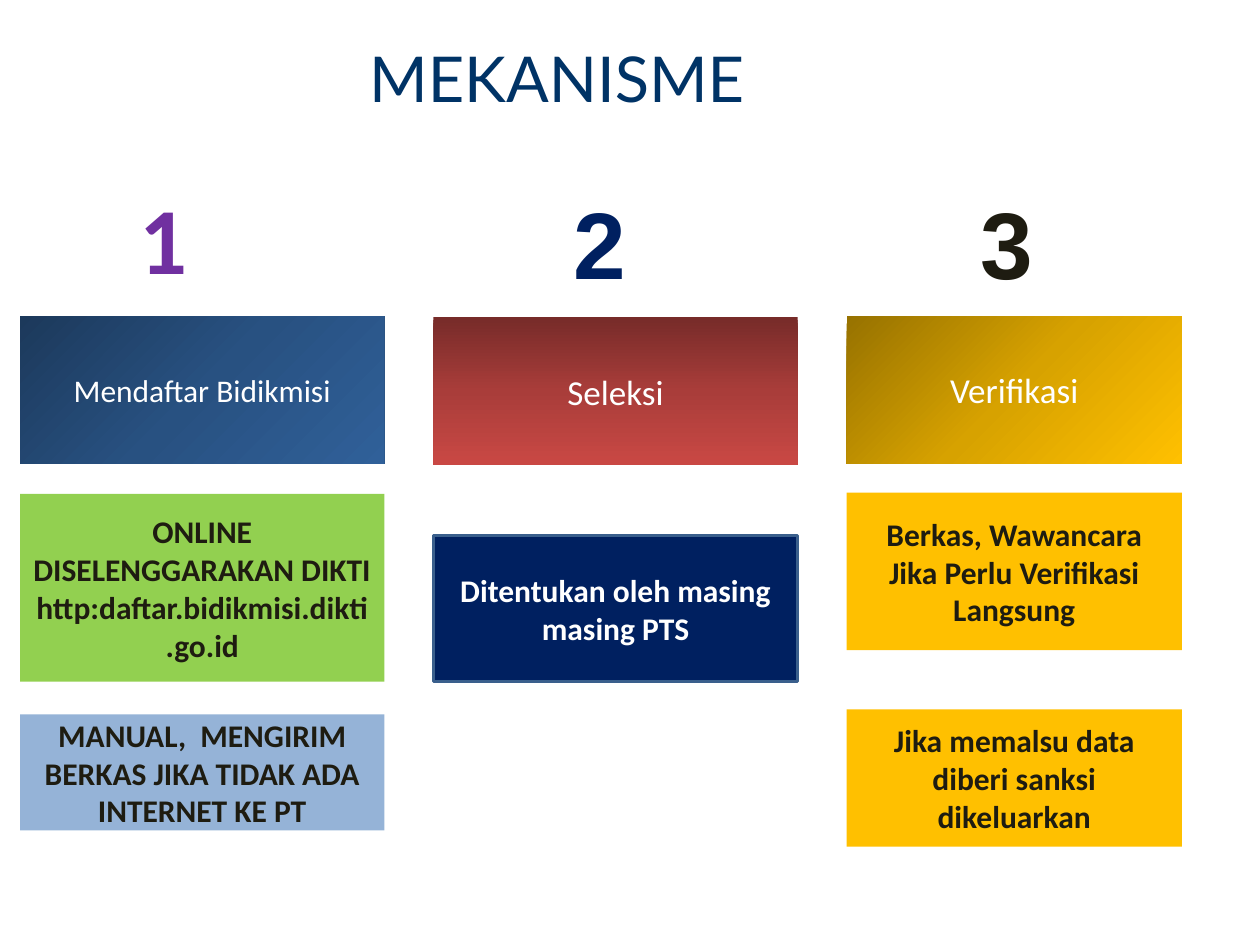
from copy import deepcopy

from pptx import Presentation
from pptx.dml.color import RGBColor
from pptx.enum.shapes import MSO_SHAPE
from pptx.enum.text import MSO_ANCHOR, PP_ALIGN
from pptx.util import Inches, Pt

COLORS = {
    "title": "003366", "white": "FFFFFF", "dark": "1E1C11", "navy": "002060",
    "purple": "7030A0", "green": "92D050", "sky": "95B3D7", "gold": "FFC000",
    "border": "3A5F8C",
}

# Content: each step has a number, a gradient header and detail boxes
TITLE = "MEKANISME"
STEPS = [
    {
        "left": 0.16, "width": 2.89,
        "number": ("1", 1.01, 1.37, "Calibri", "purple"),
        "header": ("Mendaftar Bidikmisi", 2.51, 18),
        "gradient": (["1C395B", "285181", "306099"], 315),
        "details": [
            (["ONLINE DISELENGGARAKAN DIKTI", "http:daftar.bidikmisi.dikti.go.id"],
             3.92, 1.49, "green", "dark", None),
            (["MANUAL,  MENGIRIM BERKAS JIKA TIDAK ADA INTERNET KE PT"],
             5.67, 0.92, "sky", "dark", None),
        ],
    },
    {
        "left": 3.44, "width": 2.89,
        "number": ("2", 4.45, 1.41, "Arial", "navy"),
        "header": ("Seleksi", 2.52, 20),
        "gradient": (["772B29", "A93D3A", "C94844"], 270),
        "details": [
            (["Ditentukan oleh masing masing PTS"],
             4.25, 1.16, "navy", "white", "border"),
        ],
    },
    {
        "left": 6.72, "width": 2.66,
        "number": ("3", 7.68, 1.41, "Arial", "dark"),
        "header": ("Verifikasi", 2.51, 20),
        "gradient": (["977200", "D7A200", "FFC000"], 315),
        "details": [
            (["Berkas, Wawancara Jika Perlu Verifikasi Langsung"],
             3.91, 1.25, "gold", "dark", None),
            (["Jika memalsu data diberi sanksi dikeluarkan"],
             5.63, 1.09, "gold", "dark", None),
        ],
    },
]
HEADER_HEIGHT = 1.17
NUMBER_SIZE = (0.6, 1.01)


def rgb(name):
    return RGBColor.from_string(COLORS[name])


def write(box, lines, color, align, anchor, **font_format):
    frame = box.text_frame
    frame.word_wrap = True
    frame.vertical_anchor = anchor
    frame.text = "\n".join(lines)
    for paragraph in frame.paragraphs:
        paragraph.alignment = align
        for run in paragraph.runs:
            run.font.color.rgb = rgb(color)
            for attribute, value in font_format.items():
                setattr(run.font, attribute, value)


def add_box(slide, left, top, width, height):
    box = slide.shapes.add_shape(
        MSO_SHAPE.RECTANGLE, *map(Inches, (left, top, width, height)))
    box.shadow.inherit = False
    box.line.fill.background()
    return box


def fill_gradient(box, stop_colors, angle):
    box.fill.gradient()
    box.fill.gradient_angle = angle
    # The default gradient has two stops; a third goes in the middle
    first_stop = box.fill.gradient_stops[0]
    stop_list = box._element.spPr.find(".//{*}gsLst")
    stop_list.insert(1, deepcopy(stop_list[0]))
    for stop, color, position in zip(box.fill.gradient_stops, stop_colors, (0, 0.5, 1)):
        stop.color.rgb = RGBColor.from_string(color)
        stop.position = position


def add_number(slide, digit, left, top, font_name, color):
    number = slide.shapes.add_textbox(*map(Inches, (left, top, *NUMBER_SIZE)))
    write(number, [digit], color, PP_ALIGN.LEFT, MSO_ANCHOR.BOTTOM,
          name=font_name, size=Pt(54), bold=True)
    number.text_frame.paragraphs[0].runs[0].font._element.set("spc", "50")


def main():
    deck = Presentation()
    deck.slide_width, deck.slide_height = Inches(10), Inches(7.5)
    slide = deck.slides.add_slide(deck.slide_layouts[6])

    # Title
    title = slide.shapes.add_textbox(*map(Inches, (0.33, 0.05, 9, 1.13)))
    title.text_frame.margin_left = Inches(2.6)
    write(title, [TITLE], "title", PP_ALIGN.LEFT, MSO_ANCHOR.MIDDLE,
          name="Lato", size=Pt(36.1))

    # Step columns
    for step in STEPS:
        left, width = step["left"], step["width"]
        add_number(slide, *step["number"])

        label, top, size = step["header"]
        header = add_box(slide, left, top, width, HEADER_HEIGHT)
        fill_gradient(header, *step["gradient"])
        write(header, [label], "white", PP_ALIGN.CENTER, MSO_ANCHOR.MIDDLE,
              name="Calibri", size=Pt(size))

        for lines, top, height, fill, color, border in step["details"]:
            detail = add_box(slide, left, top, width, height)
            detail.fill.solid()
            detail.fill.fore_color.rgb = rgb(fill)
            if border:
                detail.line.color.rgb = rgb(border)
                detail.line.width = Pt(2)
            write(detail, lines, color, PP_ALIGN.CENTER, MSO_ANCHOR.MIDDLE,
                  name="Calibri", size=Pt(18), bold=True)

    deck.save("out.pptx")


if __name__ == "__main__":
    main()
